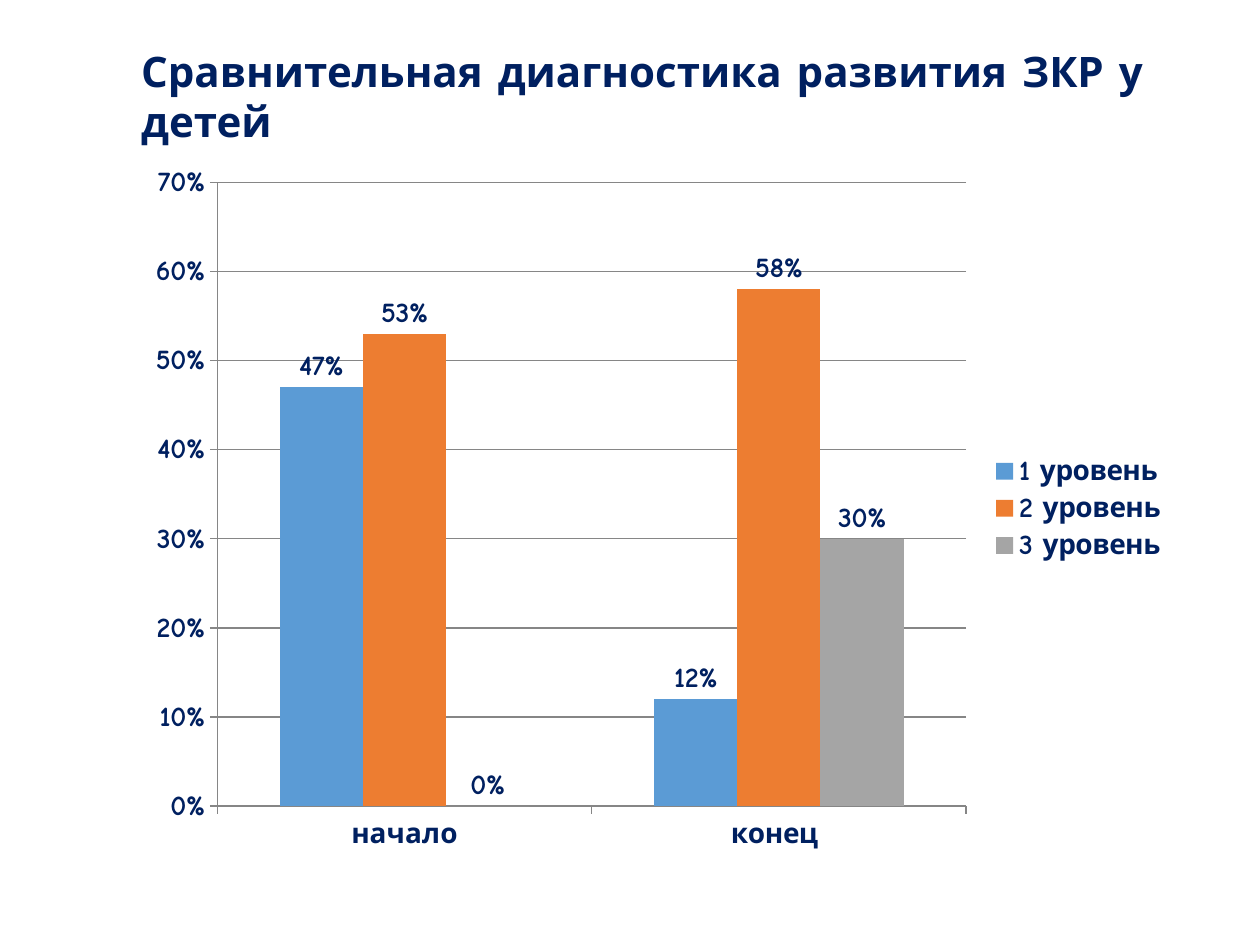
"""Build a slide comparing diagnostic levels at the start and the end."""
from pptx import Presentation
from pptx.chart.data import CategoryChartData
from pptx.dml.color import RGBColor
from pptx.enum.chart import XL_CHART_TYPE, XL_LABEL_POSITION, XL_LEGEND_POSITION, XL_TICK_MARK
from pptx.enum.text import MSO_ANCHOR, MSO_AUTO_SIZE, PP_ALIGN
from pptx.util import Inches, Pt

TITLE = "Сравнительная диагностика развития ЗКР у детей"
CATEGORIES = ["начало", "конец "]
SERIES = [
    ("1 уровень", (0.47, 0.12), "blue"),
    ("2 уровень", (0.53, 0.58), "orange"),
    ("3 уровень", (0, 0.3), "gray"),
]
COLORS = {"navy": "002060", "blue": "5B9BD5", "orange": "ED7D31", "gray": "A5A5A5", "line": "868686"}
FONT = "Comic Neue"
TITLE_BOX = (1.02, 0.31, 8.56, 0.5)
CHART_BOX = (1.07, 1.21, 8.3, 5.65)


def color(name):
    return RGBColor.from_string(COLORS[name])


def style(font, size):
    font.name, font.size, font.bold = FONT, Pt(size), True
    font.color.rgb = color("navy")


def rule(line):
    line.color.rgb = color("line")
    line.width = Pt(0.75)


def add_title(s):
    title = s.shapes.title
    title.left, title.top, title.width, title.height = map(Inches, TITLE_BOX)
    tf = title.text_frame
    tf.text = TITLE
    tf.word_wrap = True
    tf.auto_size = MSO_AUTO_SIZE.SHAPE_TO_FIT_TEXT
    tf.vertical_anchor = MSO_ANCHOR.TOP
    p = tf.paragraphs[0]
    p.alignment = PP_ALIGN.LEFT
    style(p.runs[0].font, 24)


def add_level_chart(s):
    data = CategoryChartData(number_format="0%")
    data.categories = CATEGORIES
    for name, values, _ in SERIES:
        data.add_series(name, values)
    chart = s.shapes.add_chart(XL_CHART_TYPE.COLUMN_CLUSTERED, *map(Inches, CHART_BOX), data).chart
    chart.has_title = False
    chart.font.name, chart.font.size = "Calibri", Pt(18)
    chart.has_legend = True
    chart.legend.position = XL_LEGEND_POSITION.RIGHT
    chart.legend.include_in_layout = False
    style(chart.legend.font, 16)

    for axis in (chart.category_axis, chart.value_axis):
        axis.major_tick_mark = XL_TICK_MARK.OUTSIDE
        style(axis.tick_labels.font, 16)
        rule(axis.format.line)
    axis = chart.value_axis
    axis.minimum_scale, axis.maximum_scale, axis.major_unit = 0, 0.7, 0.1
    axis.tick_labels.number_format = "0%"
    axis.tick_labels.number_format_is_linked = False
    axis.has_major_gridlines = True
    rule(axis.major_gridlines.format.line)

    plot = chart.plots[0]
    plot.gap_width, plot.overlap, plot.vary_by_categories = 150, 0, False
    for series, (_, _, fill) in zip(plot.series, SERIES):
        series.format.fill.solid()
        series.format.fill.fore_color.rgb = color(fill)
        labels = series.data_labels
        labels.show_value = True
        labels.number_format, labels.number_format_is_linked = "0%", False
        labels.position = XL_LABEL_POSITION.OUTSIDE_END
        style(labels.font, 16)


def main():
    prs = Presentation()
    prs.slide_width, prs.slide_height = Inches(10), Inches(7.5)
    s = prs.slides.add_slide(prs.slide_layouts[5])
    add_title(s)
    add_level_chart(s)
    prs.save("out.pptx")


if __name__ == "__main__":
    main()
